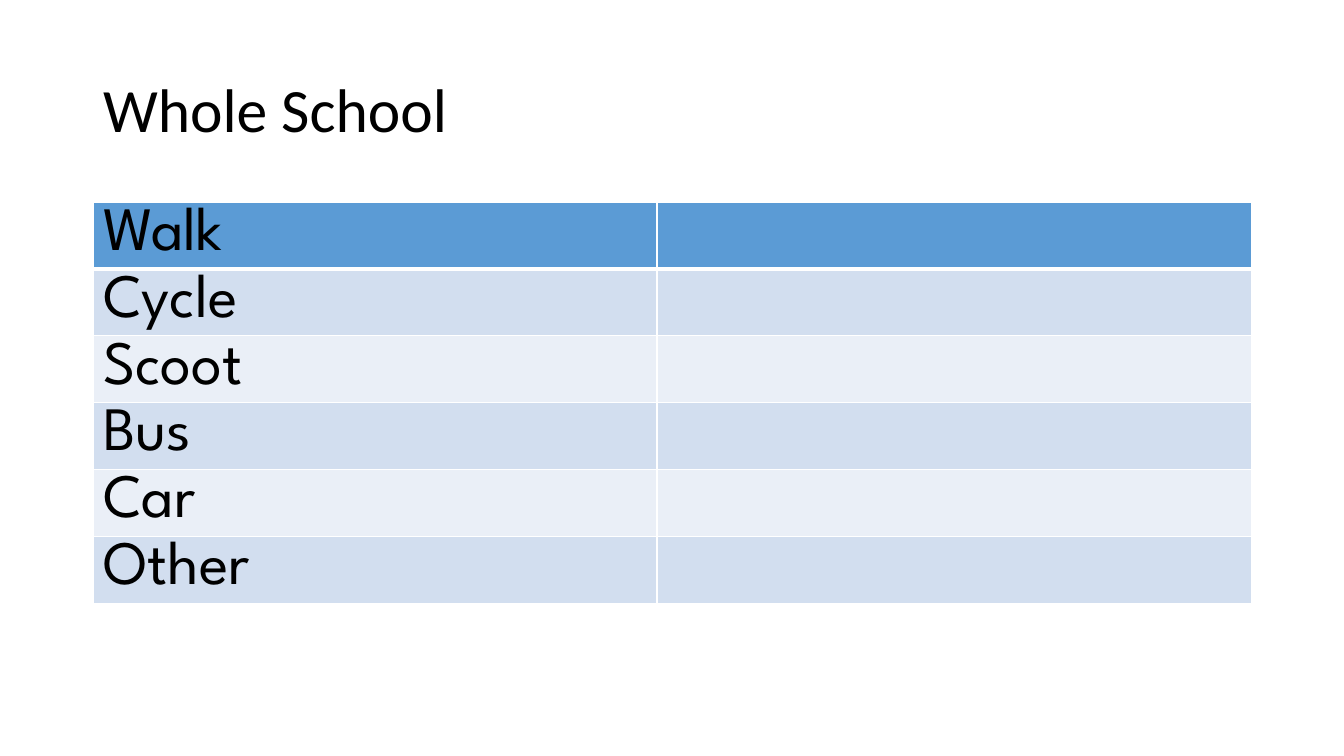
from lxml.etree import SubElement
from pptx import Presentation
from pptx.dml.color import RGBColor
from pptx.enum.text import MSO_ANCHOR, PP_ALIGN
from pptx.oxml.ns import qn
from pptx.util import Pt

PX = 914400 / 100.8


def px(n):
    return round(n * PX)


def style_text(p, font):
    p.alignment = PP_ALIGN.LEFT
    for r in p.runs:
        r.font.name = font
        r.font.size = Pt(44)
        r.font.color.rgb = RGBColor.from_string("000000")


prs = Presentation()
prs.slide_width, prs.slide_height = px(1344), px(756)
s = prs.slides.add_slide(prs.slide_layouts[5])

# Title
title = s.shapes.title
title.left, title.top, title.width, title.height = px(93), px(40), px(1159), px(146)
tf = title.text_frame
tf.text = "Whole School"
tf.vertical_anchor = MSO_ANCHOR.MIDDLE
tf.paragraphs[0].line_spacing = 0.9
style_text(tf.paragraphs[0], "Calibri")

# Travel table: rows grow to fit their text
modes = ["Walk", "Cycle", "Scoot", "Bus", "Car", "Other"]
col_widths = [564, 595]
row_height = 41
table = s.shapes.add_table(len(modes), len(col_widths), px(93), px(202),
                           px(sum(col_widths)), px(row_height * len(modes))).table
for col, width in zip(table.columns, col_widths):
    col.width = px(width)

for i, (row, mode) in enumerate(zip(table.rows, modes)):
    row.height = px(row_height)
    row.cells[0].text = mode
    style_text(row.cells[0].text_frame.paragraphs[0], "League Spartan")
    if i == 0:
        fill = "5B9BD5"
    else:
        fill = "D2DEEF" if i % 2 else "EAEFF7"
    # A thicker rule separates the first row from the rest
    borders = {"lnL": 1, "lnR": 1, "lnT": 3 if i == 1 else 1, "lnB": 3 if i == 0 else 1}
    for cell in row.cells:
        tcPr = cell._tc.get_or_add_tcPr()
        for side, width in borders.items():
            ln = SubElement(tcPr, qn(f"a:{side}"), w=str(Pt(width)))
            SubElement(SubElement(ln, qn("a:solidFill")), qn("a:srgbClr"), val="FFFFFF")
        cell.fill.solid()
        cell.fill.fore_color.rgb = RGBColor.from_string(fill)

prs.save("out.pptx")
